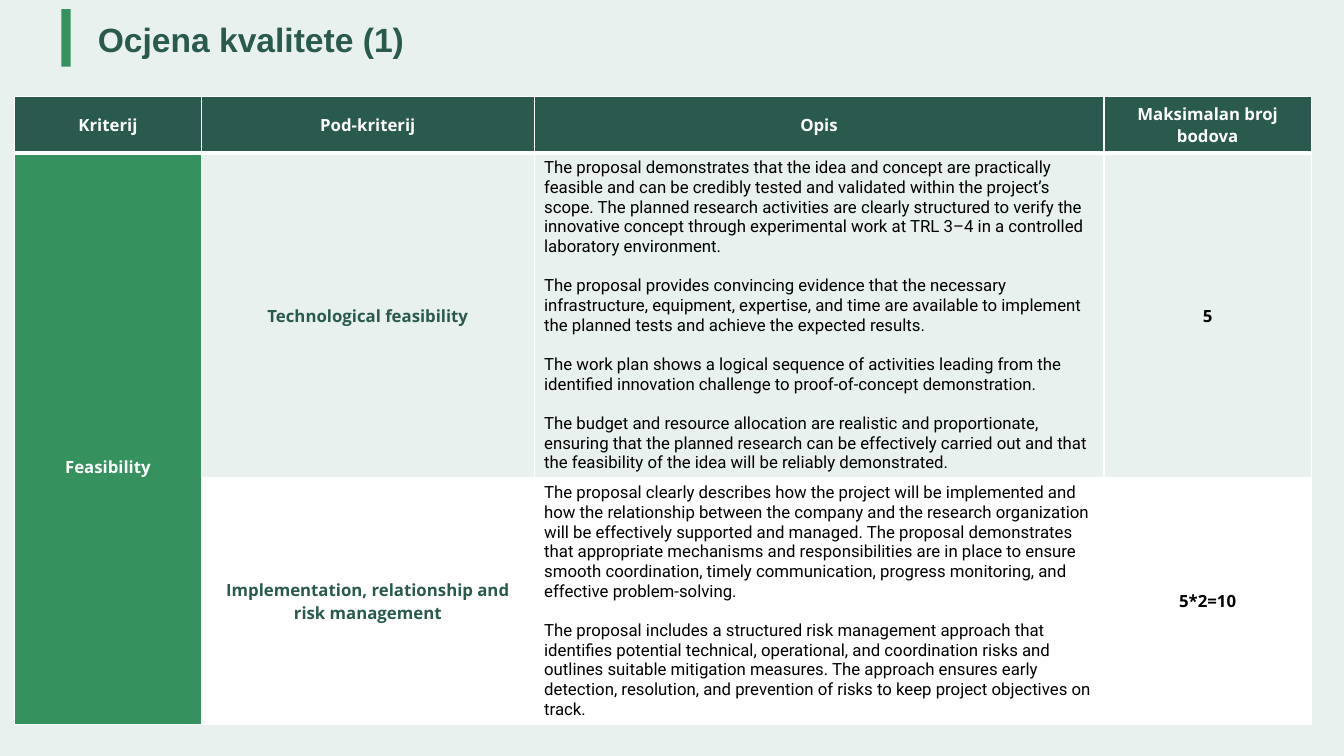
from dataclasses import dataclass

from lxml.etree import SubElement
from pptx import Presentation
from pptx.dml.color import RGBColor
from pptx.enum.shapes import MSO_SHAPE
from pptx.enum.text import MSO_ANCHOR, PP_ALIGN
from pptx.oxml import parse_xml
from pptx.oxml.ns import nsdecls, qn
from pptx.util import Cm, Pt


@dataclass(frozen=True)
class Theme:
    pale: str = "E9F1EF"
    dark: str = "295A4D"
    green: str = "35915D"
    white: str = "FFFFFF"
    black: str = "000000"
    title: int = 24
    body: int = 12
    gap: int = 14
    thin: int = 1
    thick: int = 3


THEME = Theme()
COLS = (4.72, 8.38, 14.36, 5.23)
ROWS = (1.42, 8.18, 6.2)
HEADS = ("Kriterij", "Pod-kriterij", "Opis", "Maksimalan broj bodova")
GROUP = "Feasibility"
ITEMS = (
    (
        "Technological feasibility",
        (
            "The proposal demonstrates that the idea and concept are practically feasible and can be "
            "credibly tested and validated within the project’s scope. The planned research activities "
            "are clearly structured to verify the innovative concept through experimental work at "
            "TRL 3–4 in a controlled laboratory environment.",
            "The proposal provides convincing evidence that the necessary infrastructure, equipment, "
            "expertise, and time are available to implement the planned tests and achieve the expected "
            "results.",
            "The work plan shows a logical sequence of activities leading from the identified innovation "
            "challenge to proof-of-concept demonstration.",
            "The budget and resource allocation are realistic and proportionate, ensuring that the "
            "planned research can be effectively carried out and that the feasibility of the idea will "
            "be reliably demonstrated.",
        ),
        "5",
        THEME.pale,
    ),
    (
        "Implementation, relationship and risk management",
        (
            "The proposal clearly describes how the project will be implemented and how the relationship "
            "between the company and the research organization will be effectively supported and managed. "
            "The proposal demonstrates that appropriate mechanisms and responsibilities are in place to "
            "ensure smooth coordination, timely communication, progress monitoring, and effective "
            "problem-solving.",
            "The proposal includes a structured risk management approach that identifies potential "
            "technical, operational, and coordination risks and outlines suitable mitigation measures. "
            "The approach ensures early detection, resolution, and prevention of risks to keep project "
            "objectives on track.",
        ),
        "5*2=10",
        THEME.white,
    ),
)


def style(item, form):
    for key, value in form.items():
        setattr(item, key, value)


def paint(fill, color):
    fill.solid()
    fill.fore_color.rgb = RGBColor.from_string(color)


def write(frame, lines, color, font="Open Sans", size=THEME.body, bold=True, align=PP_ALIGN.CENTER):
    """Fill a text frame with one paragraph per line, spaced by the theme gap."""
    for i, line in enumerate(lines):
        para = frame.paragraphs[0] if i == 0 else frame.add_paragraph()
        para.alignment = align
        if i:
            para.space_before = Pt(THEME.gap)
        run = para.add_run()
        run.text = line
        style(run.font, {"name": font, "size": Pt(size), "bold": bold})
        run.font.color.rgb = RGBColor.from_string(color)


def edge(cell, widths):
    """Draw white cell borders; widths maps a side letter to points."""
    props = cell._tc.get_or_add_tcPr()
    for i, (side, width) in enumerate(widths.items()):
        line = parse_xml(f'<a:ln{side} {nsdecls("a")} w="{Pt(width)}"/>')
        fill = SubElement(line, qn("a:solidFill"))
        SubElement(fill, qn("a:srgbClr"), val=THEME.white)
        props.insert(i, line)


def add_title(slide, text):
    title = slide.shapes.title
    style(title, {"left": Cm(2.21), "top": Cm(0.46), "width": Cm(27.2), "height": Cm(1.19)})
    style(title.text_frame, {"vertical_anchor": MSO_ANCHOR.MIDDLE, "word_wrap": True})
    write(title.text_frame, [text], THEME.dark, "Arial", THEME.title, align=PP_ALIGN.LEFT)
    title.text_frame.paragraphs[0].line_spacing = 0.9


def add_bar(slide):
    bar = slide.shapes.add_shape(MSO_SHAPE.RECTANGLE, Cm(1.55), Cm(0.23), Cm(0.23), Cm(1.45))
    bar.shadow.inherit = False
    paint(bar.fill, THEME.green)
    bar.line.fill.background()


def add_grid(slide):
    grid = slide.shapes.add_table(
        len(ROWS), len(COLS), Cm(0.36), Cm(2.44), Cm(sum(COLS)), Cm(sum(ROWS))
    ).table
    for col, width in zip(grid.columns, COLS):
        col.width = Cm(width)
    for row, height in zip(grid.rows, ROWS):
        row.height = Cm(height)
    grid.cell(1, 0).merge(grid.cell(2, 0))

    fills = [THEME.dark] + [item[-1] for item in ITEMS]
    for r, color in enumerate(fills):
        for c in range(len(COLS)):
            cell = grid.cell(r, c)
            cell.vertical_anchor = MSO_ANCHOR.MIDDLE
            paint(cell.fill, THEME.green if r and c == 0 else color)
            top = THEME.thick if r == 1 else THEME.thin
            base = THEME.thin if r else THEME.thick
            edge(cell, {"L": THEME.thin, "R": THEME.thin, "T": top, "B": base})

    for c, head in enumerate(HEADS):
        write(grid.cell(0, c).text_frame, [head], THEME.white)
    group = grid.cell(1, 0)
    group.margin_top = Cm(1.55)
    write(group.text_frame, [GROUP], THEME.white)
    for r, (name, notes, score, _) in enumerate(ITEMS, 1):
        write(grid.cell(r, 1).text_frame, [name], THEME.dark)
        write(grid.cell(r, 2).text_frame, notes, THEME.black, "Roboto", bold=False, align=PP_ALIGN.LEFT)
        write(grid.cell(r, 3).text_frame, [score], THEME.black)


def main():
    deck = Presentation()
    style(deck, {"slide_width": Cm(33.87), "slide_height": Cm(19.05)})
    slide = deck.slides.add_slide(deck.slide_layouts.get_by_name("Title Only"))
    paint(slide.background.fill, THEME.pale)
    add_title(slide, "Ocjena kvalitete (1)")
    add_bar(slide)
    add_grid(slide)
    deck.save("out.pptx")


if __name__ == "__main__":
    main()
